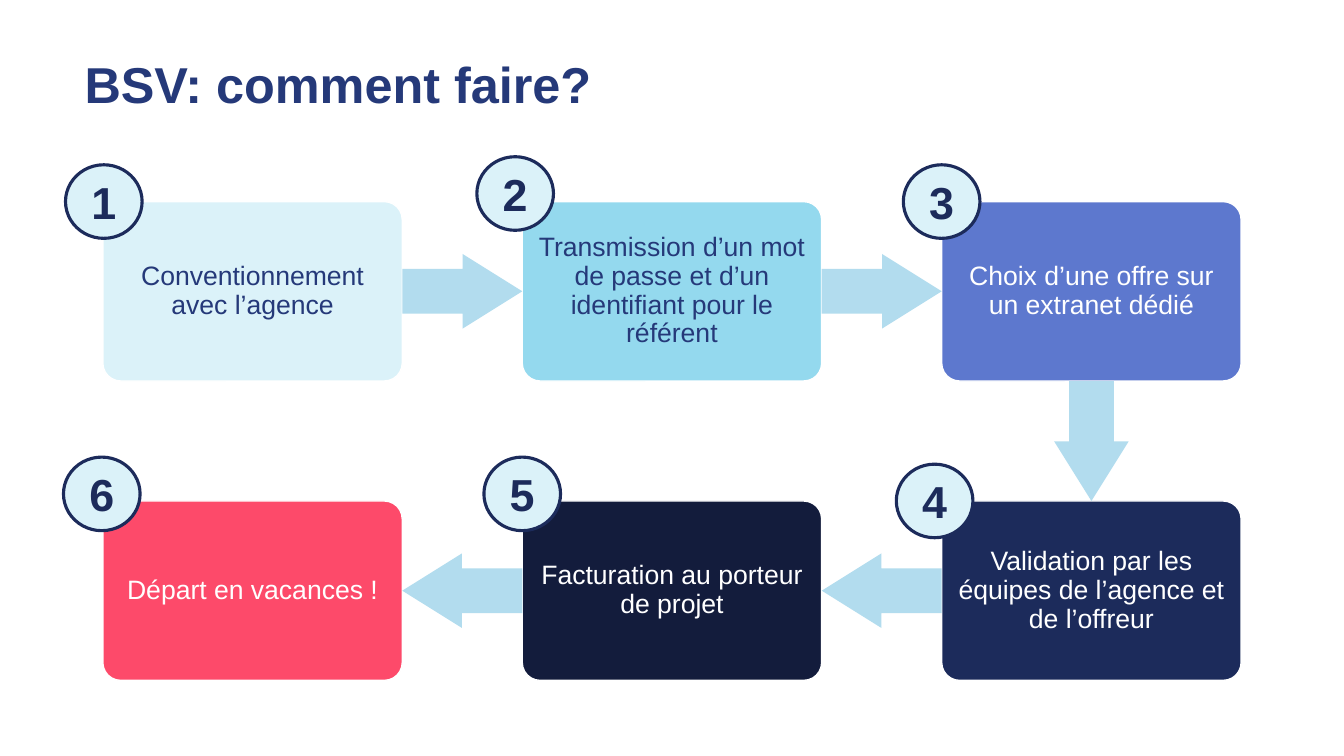
import pptx
import pptx.util
import pptx.dml.color
import pptx.enum.shapes
import pptx.enum.text

Inches = pptx.util.Inches
SHAPE = pptx.enum.shapes.MSO_SHAPE
ALIGN = pptx.enum.text.PP_ALIGN

COLORS = {
    "title": "253979", "white": "FFFFFF", "navy": "1C2B5B", "ice": "DBF2F9",
    "sky": "94D9EE", "blue": "5D78CE", "night": "131C3C", "coral": "FD4A6A",
    "arrow": "B2DCEE",
}

# Grid of step cards
CARD_W, CARD_H = 2.97, 1.78
PITCH_X, PITCH_Y = 4.16, 2.97
ARROW_W, ARROW_H = 1.19, 0.74
BADGE_W, BADGE_H = 0.76, 0.73

# Text, column, row, fill, text colour, badge offset from the card's corner
STEPS = [
    ("Conventionnement avec l’agence", 0, 0, "ice", "title", (-0.37, -0.37)),
    ("Transmission d’un mot de passe et d’un identifiant pour le référent",
     1, 0, "sky", "title", (-0.45, -0.45)),
    ("Choix d’une offre sur un extranet dédié", 2, 0, "blue", "white", (-0.38, -0.37)),
    ("Validation par les équipes de l’agence et de l’offreur",
     2, 1, "navy", "white", (-0.45, -0.37)),
    ("Facturation au porteur de projet", 1, 1, "night", "white", (-0.38, -0.44)),
    ("Départ en vacances !", 0, 1, "coral", "white", (-0.39, -0.44)),
]


def rgb(name):
    return pptx.dml.color.RGBColor.from_string(COLORS[name])


def write(shape, text, size, color, bold=False, align=ALIGN.CENTER, spacing=1.0, margin=None):
    frame = shape.text_frame
    frame.word_wrap = True
    frame.vertical_anchor = pptx.enum.text.MSO_ANCHOR.MIDDLE
    if margin is not None:
        frame.margin_left = frame.margin_right = Inches(margin)
        frame.margin_top = frame.margin_bottom = Inches(margin)
    frame.text = text
    paragraph = frame.paragraphs[0]
    paragraph.alignment = align
    paragraph.line_spacing = spacing
    font = paragraph.runs[0].font
    font.name, font.size, font.bold = "Arial", pptx.util.Pt(size), bold
    font.color.rgb = rgb(color)


def add_block(slide, kind, left, top, width, height, fill, line=None, line_width=1):
    block = slide.shapes.add_shape(
        kind, Inches(left), Inches(top), Inches(width), Inches(height))
    block.shadow.inherit = False
    block.fill.solid()
    block.fill.fore_color.rgb = rgb(fill)
    if line:
        block.line.color.rgb = rgb(line)
        block.line.width = pptx.util.Pt(line_width)
    else:
        block.line.fill.background()
    return block


def add_title(slide, left, top, width, height):
    title = slide.shapes.add_textbox(
        Inches(left), Inches(top), Inches(width), Inches(height))
    write(title, "BSV: comment faire?", 36, "title", bold=True,
          align=ALIGN.LEFT, spacing=0.9)


def add_card(slide, left, top, text, fill, color):
    card = add_block(slide, SHAPE.ROUNDED_RECTANGLE, left, top, CARD_W, CARD_H, fill, "white")
    card.adjustments[0] = 0.1
    write(card, text, 19, color, spacing=0.9, margin=0.08)


def add_arrow(slide, start, end):
    """Place an arrow midway between two cards, given their corners."""
    (x1, y1), (x2, y2) = start, end
    left = (x1 + x2 + CARD_W - ARROW_W) / 2
    top = (y1 + y2 + CARD_H - ARROW_H) / 2
    arrow = add_block(slide, SHAPE.RIGHT_ARROW, left, top, ARROW_W, ARROW_H, "arrow")
    arrow.adjustments[0], arrow.adjustments[1] = 0.6, 0.8
    arrow.rotation = 90 if y2 > y1 else 180 if x2 < x1 else 0


def add_badge(slide, center_x, center_y, number):
    badge = add_block(slide, SHAPE.OVAL, center_x - BADGE_W / 2, center_y - BADGE_H / 2,
                      BADGE_W, BADGE_H, "ice", "navy", 2.25)
    write(badge, str(number), 32, "navy", bold=True)


def add_process(slide, left, top):
    corners = [(left + column * PITCH_X, top + row * PITCH_Y)
               for _, column, row, *_ in STEPS]
    # Cards
    for (x, y), (text, _, _, fill, color, _) in zip(corners, STEPS):
        add_card(slide, x, y, text, fill, color)
    # Arrows from each step to the next
    for start, end in zip(corners, corners[1:]):
        add_arrow(slide, start, end)
    # Numbered badges
    for number, ((x, y), step) in enumerate(zip(corners, STEPS), 1):
        dx, dy = step[-1]
        add_badge(slide, x + dx + 0.38, y + dy + 0.37, number)


def main():
    deck = pptx.Presentation()
    deck.slide_width, deck.slide_height = Inches(13.33), Inches(7.5)
    slide = deck.slides.add_slide(deck.slide_layouts[6])
    add_title(slide, 0.74, 0.47, 11.5, 0.78)
    add_process(slide, 1.02, 2)
    deck.save("out.pptx")


if __name__ == "__main__":
    main()
